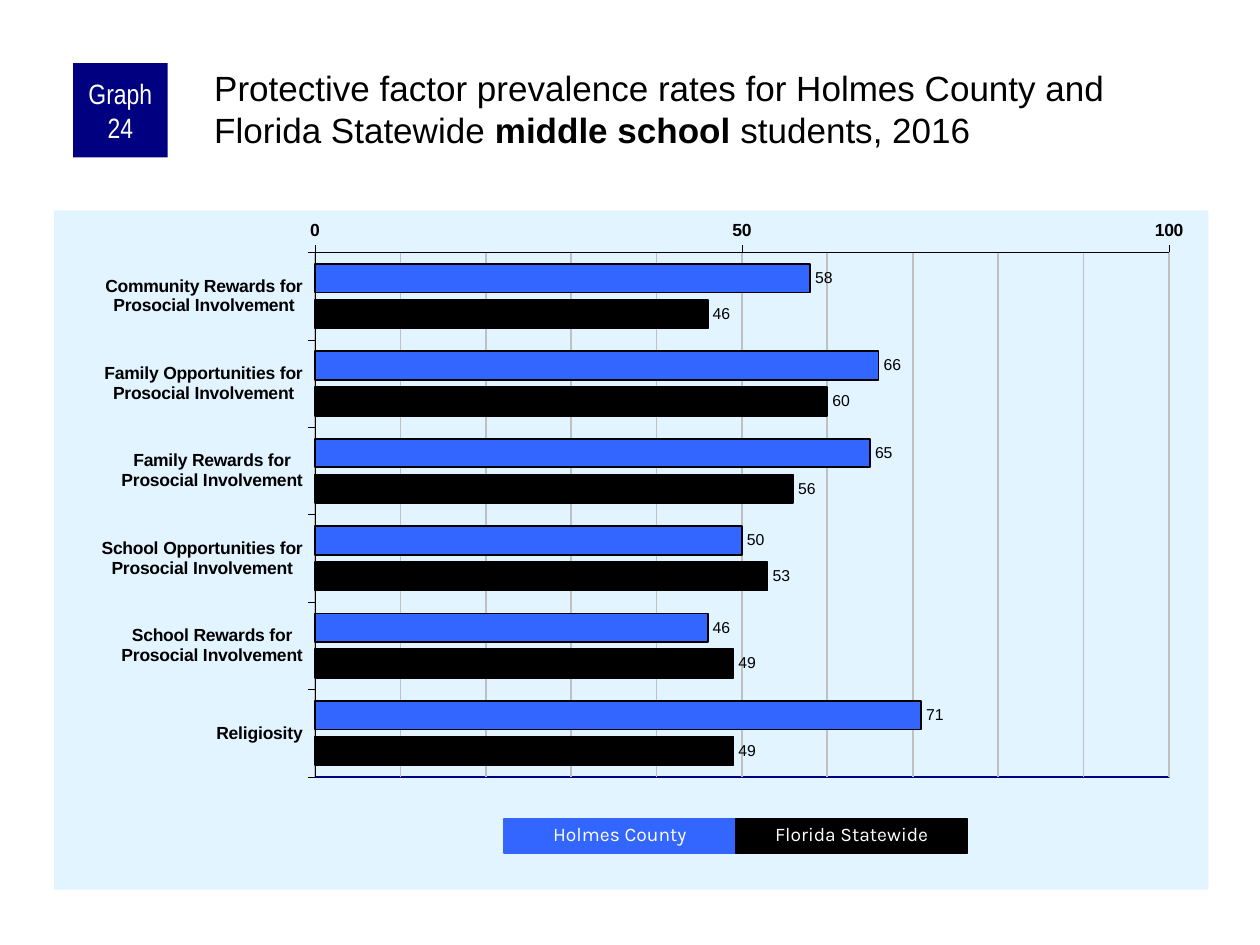
from copy import deepcopy

from pptx import Presentation
from pptx import util as u
from pptx.chart.data import CategoryChartData
from pptx.dml.color import RGBColor
from pptx.enum import chart as charts, shapes, text
from pptx.oxml import parse_xml
from pptx.oxml.ns import nsdecls, qn

BLACK = RGBColor(0x00, 0x00, 0x00)
WHITE = RGBColor(0xFF, 0xFF, 0xFF)
NAVY = RGBColor(0x00, 0x00, 0x80)
BLUE = RGBColor(0x33, 0x66, 0xFF)
PALE = RGBColor(0xE1, 0xF4, 0xFF)
GREY = RGBColor(0xC0, 0xC0, 0xC0)

CATEGORIES = [
    "Community Rewards for\nProsocial Involvement",
    "Family Opportunities for\nProsocial Involvement",
    "Family Rewards for\nProsocial Involvement",
    "School Opportunities for\nProsocial Involvement",
    "School Rewards for\nProsocial Involvement",
    "Religiosity",
]
SERIES = [
    ("Holmes County", BLUE, (58, 66, 65, 50, 46, 71)),
    ("Florida Statewide", BLACK, (46, 60, 56, 53, 49, 49)),
]


def set_font(font, size, color=BLACK, name="Arial", bold=False):
    font.size, font.name, font.bold = u.Pt(size), name, bold
    font.color.rgb = color


def set_line(line, color, width):
    line.color.rgb = color
    line.width = u.Pt(width)


def area_style(fill="<a:noFill/>", line="<a:ln><a:noFill/></a:ln>"):
    """Return a c:spPr element for an area of a chart."""
    return parse_xml(f'<c:spPr {nsdecls("c", "a")}>{fill}{line}</c:spPr>')


def solid(color):
    return f'<a:solidFill><a:srgbClr val="{color}"/></a:solidFill>'


class SlideBuilder:
    def __init__(self, page):
        self.page = page

    def set_insets(self, frame, left, top, right, bottom):
        frame.margin_left, frame.margin_top = u.Inches(left), u.Inches(top)
        frame.margin_right, frame.margin_bottom = u.Inches(right), u.Inches(bottom)

    def label_box(self, place, words, fill, size, font, outlined=False):
        """Add a filled rectangle with centred white text."""
        box = self.page.shapes.add_shape(
            shapes.MSO_SHAPE.RECTANGLE, *map(u.Inches, place))
        box.shadow.inherit = False
        box.fill.solid()
        box.fill.fore_color.rgb = fill
        if outlined:
            set_line(box.line, fill, 0.75)
        else:
            box.line.fill.background()
        frame = box.text_frame
        frame.text = words
        frame.word_wrap = True
        para = frame.paragraphs[0]
        para.alignment = text.PP_ALIGN.CENTER
        set_font(para.runs[0].font, size, WHITE, font)
        return box

    def title(self, place, spans, size):
        """Add a heading from (words, bold) pairs."""
        box = self.page.shapes.add_textbox(*map(u.Inches, place))
        frame = box.text_frame
        frame.word_wrap = True
        self.set_insets(frame, 0.03, 0.03, 0, 0)
        for words, bold in spans:
            span = frame.paragraphs[0].add_run()
            span.text = words
            set_font(span.font, size, bold=bold)

    def bar_chart(self, place, plot_place):
        data = CategoryChartData()
        data.categories = CATEGORIES
        for name, _, values in SERIES:
            data.add_series(name, values)
        chart = self.page.shapes.add_chart(
            charts.XL_CHART_TYPE.BAR_CLUSTERED, *map(u.Inches, place), data).chart
        chart.has_legend = chart.has_title = False
        set_font(chart.font, 11.8)

        plot = chart.plots[0]
        plot.gap_width, plot.overlap = 80, -25
        plot.vary_by_categories = False
        for series, (_, color, _) in zip(plot.series, SERIES):
            series.invert_if_negative = False
            series.format.fill.solid()
            series.format.fill.fore_color.rgb = color
            set_line(series.format.line, BLACK, 1)
            labels = series.data_labels
            labels.show_value = True
            labels.position = charts.XL_LABEL_POSITION.OUTSIDE_END
            set_font(labels.font, 9)

        self.style_axes(chart.category_axis, chart.value_axis)
        self.style_areas(chart, plot_place)

    def style_axes(self, categories, values):
        for axis in (categories, values):
            axis.major_tick_mark = charts.XL_TICK_MARK.OUTSIDE
            axis.minor_tick_mark = charts.XL_TICK_MARK.NONE
            set_font(axis.tick_labels.font, 10, bold=True)
            set_line(axis.format.line, BLACK, 0.25)
        categories.reverse_order = True
        categories.crosses = charts.XL_AXIS_CROSSES.MAXIMUM
        values.minimum_scale, values.maximum_scale = 0, 100
        values.major_unit = 50
        values.has_major_gridlines = values.has_minor_gridlines = True
        set_line(values.major_gridlines.format.line, GREY, 1)
        # Minor gridlines every 10 share the major style.
        scale = values.major_gridlines.format.line._ln.getparent().getparent().getparent()
        scale.find(qn("c:minorGridlines")).append(
            deepcopy(scale.find(qn("c:majorGridlines")).find(qn("c:spPr"))))
        unit = parse_xml(f'<c:minorUnit {nsdecls("c")} val="10"/>')
        scale.find(qn("c:majorUnit")).addnext(unit)

    def style_areas(self, chart, plot_place):
        """Fill the chart, frame the plot and fix the plot's place."""
        root = chart.font._element.getroottree().getroot()
        root.find(qn("c:chart")).addnext(area_style(solid(PALE)))
        area = root.find(qn("c:chart")).find(qn("c:plotArea"))
        area.append(area_style(line=f'<a:ln w="12700">{solid(NAVY)}</a:ln>'))
        for old in area.findall(qn("c:layout")):
            area.remove(old)
        sizes = "".join(f'<c:{tag} val="{value}"/>'
                        for tag, value in zip("xywh", plot_place))
        area.insert(0, parse_xml(
            f'<c:layout {nsdecls("c")}><c:manualLayout>'
            '<c:layoutTarget val="inner"/><c:xMode val="edge"/><c:yMode val="edge"/>'
            f'{sizes}</c:manualLayout></c:layout>'))

    def legend(self, left, top, width, height):
        for index, (name, color, _) in enumerate(SERIES):
            box = self.label_box((left + index * width, top, width, height),
                                 name, color, 11, "Karla", outlined=True)
            box.text_frame.vertical_anchor = text.MSO_ANCHOR.TOP
            box.text_frame.auto_size = text.MSO_AUTO_SIZE.SHAPE_TO_FIT_TEXT
            box.text_frame.paragraphs[0].line_spacing = 0.9


def main():
    deck = Presentation()
    deck.slide_width, deck.slide_height = u.Inches(10), u.Inches(7.5)
    builder = SlideBuilder(deck.slides.add_slide(deck.slide_layouts[6]))

    builder.bar_chart((0.43, 1.67, 9.16, 5.39), (0.226, 0.062, 0.74, 0.772))
    badge = builder.label_box((0.58, 0.5, 0.75, 0.75), "Graph 24", NAVY, 16, "Arial Narrow")
    builder.set_insets(badge.text_frame, 0.05, 0, 0.05, 0)
    builder.title((1.67, 0.5, 7.92, 0.83), [
        ("Protective factor prevalence rates for Holmes County and Florida Statewide ", False),
        ("middle school ", True),
        ("students, 2016", False),
    ], 20)
    builder.legend(4, 6.5, 1.84, 0.27)
    deck.save("out.pptx")


if __name__ == "__main__":
    main()
